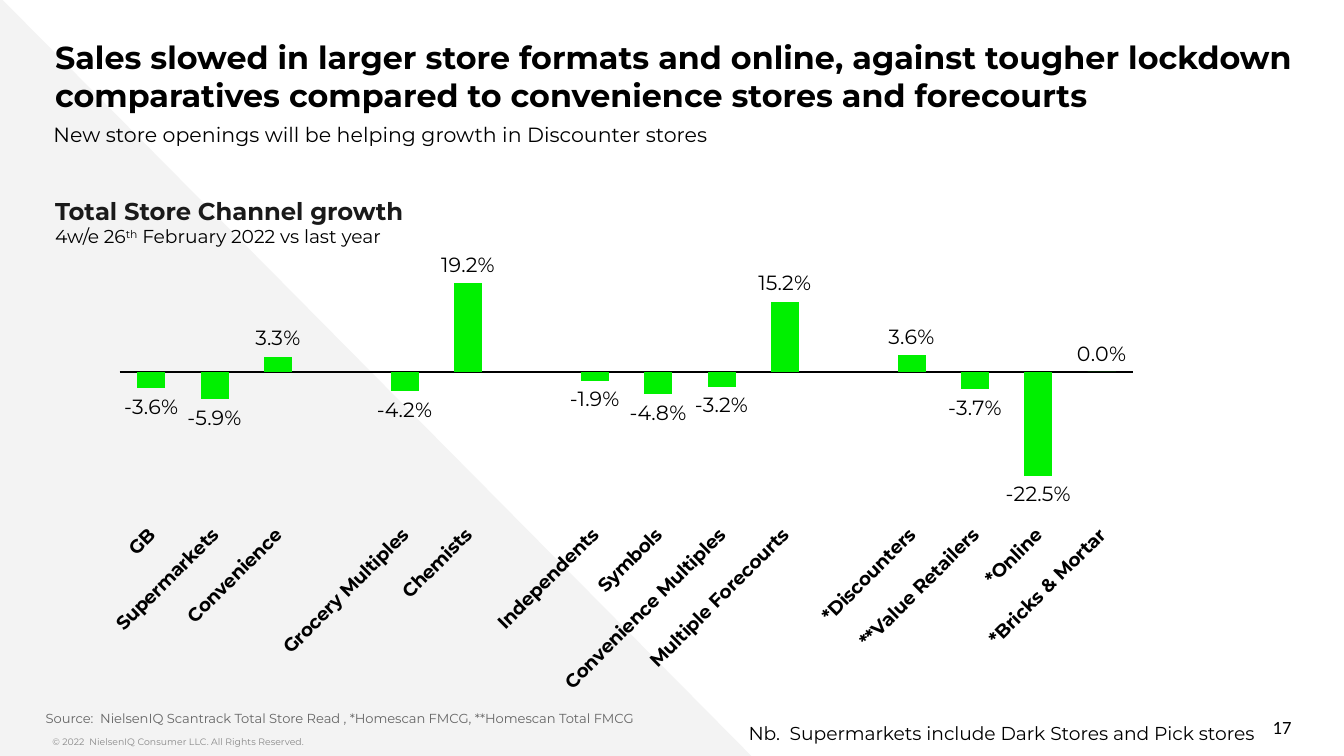
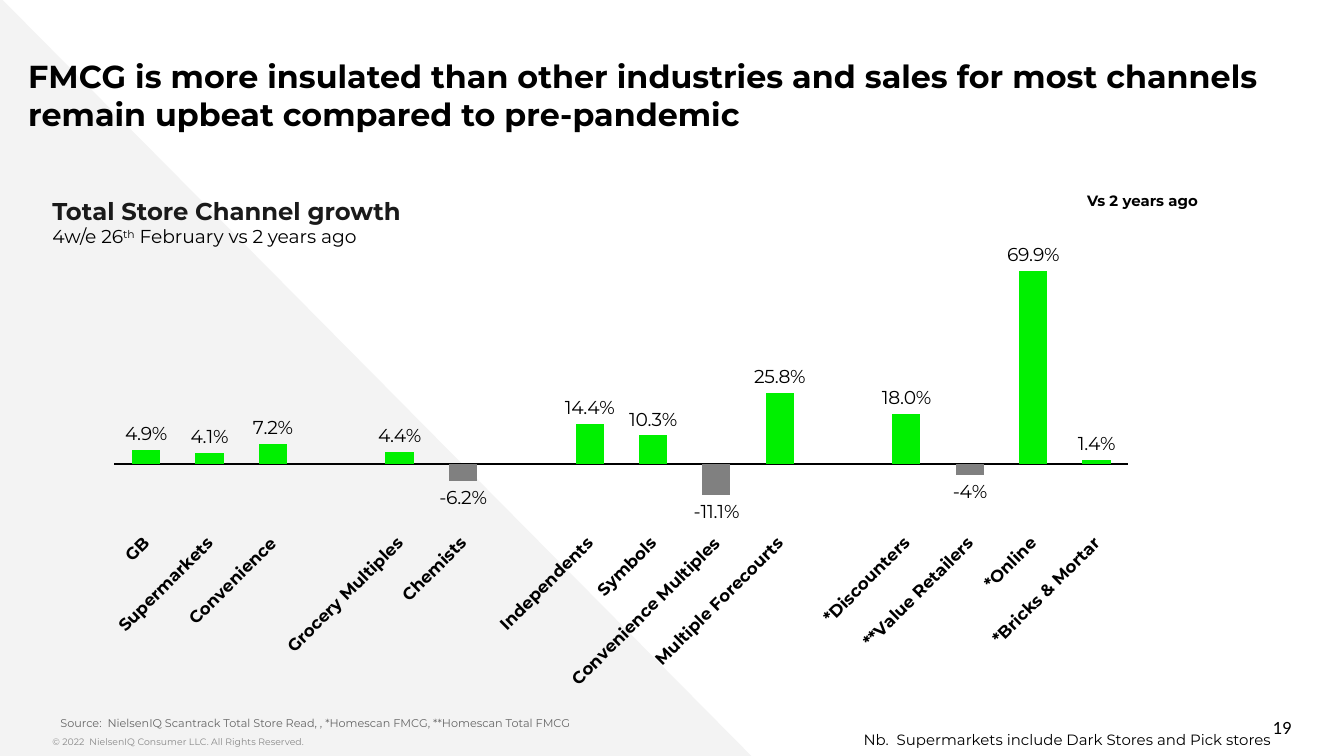
from lxml import etree
from pptx import Presentation
from pptx.chart.data import CategoryChartData
from pptx.dml.color import RGBColor
from pptx.enum.chart import XL_CHART_TYPE as ChartType
from pptx.enum.chart import XL_LABEL_POSITION as LabelPosition
from pptx.enum.chart import XL_TICK_LABEL_POSITION as TickLabels
from pptx.enum.chart import XL_TICK_MARK as TickMark
from pptx.enum.shapes import MSO_SHAPE as Preset
from pptx.enum.text import MSO_ANCHOR as Anchor
from pptx.enum.text import MSO_AUTO_SIZE as AutoSize
from pptx.enum.text import PP_ALIGN as Align
from pptx.oxml import parse_xml
from pptx.util import Inches, Pt

WIDTH = 10
HEIGHT = WIDTH * 9 / 16
FONT = "Montserrat"
COLORS = {
    "black": "000000", "heading": "1A1A1A", "source": "666666", "copyright": "888888",
    "band": "F3F3F3", "bar": "00F000", "decline": "808080",
}
CHART_NS = "http://schemas.openxmlformats.org/drawingml/2006/chart"

COPYRIGHT = "© 2022  NielsenIQ Consumer LLC. All Rights Reserved."
NOTE = "Nb.  Supermarkets include Dark Stores and Pick stores"
CHANNELS = [
    "GB", "Supermarkets", "Convenience", "",
    "Grocery Multiples", "Chemists", "",
    "Independents", "Symbols", "Convenience Multiples", "Multiple Forecourts", "",
    "*Discounters", "**Value Retailers", "*Online", "*Bricks & Mortar",
]

SLIDES = [
    {
        "number": "17",
        "title": "Sales slowed in larger store formats and online, against tougher lockdown "
                 "comparatives compared to convenience stores and forecourts",
        "title_box": (0.41, 0.18, 9.53, 0.41),
        "period": " February 2022 vs last year",
        "heading_left": 0.41,
        "source": "Source:  NielsenIQ Scantrack Total Store Read , *Homescan FMCG, "
                  "**Homescan Total FMCG",
        "source_at": (0.18, 5.19), "source_size": 7,
        "note_box": (5.37, 5.32, 4.06, 0.27), "note_size": 10,
        "extra": ("New store openings will be helping growth in Discounter stores",
                  (0.3, 0.86, 9.53, 0.29), {"size": 11}),
        "values": [-0.036, -0.059, 0.033, None, -0.042, 0.192, None, -0.019, -0.048,
                   -0.032, 0.152, None, 0.036, -0.037, -0.225, 0],
        "chart_top": 1.71, "plot_at": (0.009, 0.008), "scale": (-0.3, 0.3),
        "axis_size": 10, "label_size": 11,
        "decline": "bar", "own_labels": {},
    },
    {
        "number": "19",
        "title": "FMCG is more insulated than other industries and sales for most channels "
                 "remain upbeat compared to pre-pandemic",
        "title_box": (0.21, 0.32, 9.79, 0.65),
        "period": " February vs 2 years ago",
        "heading_left": 0.39,
        "source": "Source:  NielsenIQ Scantrack Total Store Read, , *Homescan FMCG, "
                  "**Homescan Total FMCG",
        "source_at": (0.29, 5.23), "source_size": 6,
        "note_box": (6.29, 5.39, 3.27, 0.24), "note_size": 8,
        "extra": ("Vs 2 years ago", (7.99, 1.38, 1.04, 0.24),
                  {"size": 8, "bold": True, "wrap": False}),
        "values": [0.049, 0.041, 0.072, None, 0.044, -0.062, None, 0.144, 0.103,
                   -0.111, 0.258, None, 0.18, -0.04, 0.699, 0.014],
        "chart_top": 1.64, "plot_at": (0.004, 0.047), "scale": (-0.2, 0.8),
        "axis_size": 9, "label_size": 10,
        "decline": "decline", "own_labels": {13: "-4%"},
    },
]


def rgb(name):
    return RGBColor.from_string(COLORS[name])


def inches(box):
    return [Inches(length) for length in box]


def style_font(font, size, color="black", bold=False, name=FONT):
    font.name, font.size, font.bold = name, Pt(size), bold
    font.color.rgb = rgb(color)


def write(shape, text, *, align=Align.LEFT, anchor=Anchor.TOP, inset=(0, 0.05),
          wrap=True, indent=0, space_after=0, **font):
    """Fill a shape with a string or a list of (text, font changes) runs."""
    frame = shape.text_frame
    frame.auto_size, frame.word_wrap = AutoSize.NONE, wrap
    frame.vertical_anchor = anchor
    frame.margin_left = frame.margin_right = Inches(inset[0])
    frame.margin_top = frame.margin_bottom = Inches(inset[1])
    paragraph = frame.paragraphs[0]
    paragraph.alignment, paragraph.space_after = align, Pt(space_after)
    if indent:
        properties = paragraph._p.get_or_add_pPr()
        properties.set("marL", str(Inches(indent)))
        properties.set("indent", "0")
    for part, changes in [(text, {})] if isinstance(text, str) else text:
        options = {**font, **changes}
        superscript = options.pop("superscript", False)
        if options.pop("new_line", False):
            paragraph.add_line_break()
        run = paragraph.add_run()
        run.text = part
        style_font(run.font, **options)
        if superscript:
            run._r.get_or_add_rPr().set("baseline", "30000")
    return shape


def add_text(slide, text, box, **options):
    return write(slide.shapes.add_textbox(*inches(box)), text, **options)


def decorate_layout(layout, slide):
    """Draw the grey band and copyright line once and move them to the layout."""
    band = slide.shapes.add_shape(
        Preset.RIGHT_TRIANGLE, *inches((0, -0.02, 5.59, HEIGHT + 0.02)))
    band.shadow.inherit = False
    band.fill.solid()
    band.fill.fore_color.rgb = rgb("band")
    band.line.fill.background()
    notice = add_text(slide, COPYRIGHT, (0.39, 5.43, 5.54, 0.2), size=5, color="copyright")
    for position, shape in enumerate((band, notice)):
        shape._element.nvSpPr.cNvPr.set("id", str(20 + position))
        layout.shapes._spTree.insert(2 + position, shape._element)


def place_plot(chart, x, y, width, height):
    layout = etree.Element(f"{{{CHART_NS}}}layout")
    manual = etree.SubElement(layout, f"{{{CHART_NS}}}manualLayout")
    settings = {"layoutTarget": "inner", "xMode": "edge", "yMode": "edge",
                "x": x, "y": y, "w": width, "h": height}
    for tag, value in settings.items():
        etree.SubElement(manual, f"{{{CHART_NS}}}{tag}").set("val", str(value))
    area = chart._chartSpace.chart.plotArea
    for old in area.findall(f"{{{CHART_NS}}}layout"):
        area.remove(old)
    area.insert(0, parse_xml(etree.tostring(layout)))


def add_growth_chart(slide, content):
    data = CategoryChartData(number_format="0.0%")
    data.categories = CHANNELS
    data.add_series("Series 1", content["values"])
    chart = slide.shapes.add_chart(
        ChartType.COLUMN_CLUSTERED,
        *inches((0.82, content["chart_top"], 7.85, 3.52)), data).chart
    chart.has_legend = chart.has_title = False
    style_font(chart.font, 10)
    place_plot(chart, *content["plot_at"], 0.961, 0.585)

    channels = chart.category_axis
    channels.tick_label_position = TickLabels.LOW
    channels.major_tick_mark = channels.minor_tick_mark = TickMark.NONE
    channels.has_major_gridlines = False
    channels.format.line.color.rgb = rgb("black")
    channels.format.line.width = Pt(0.75)
    style_font(channels.tick_labels.font, content["axis_size"], bold=True)
    channels._element.txPr.bodyPr.set("rot", str(-45 * 60000))

    growth = chart.value_axis
    growth.visible = growth.has_major_gridlines = False
    growth.minimum_scale, growth.maximum_scale = content["scale"]

    plot = chart.plots[0]
    plot.gap_width, plot.vary_by_categories = 125, False
    series = plot.series[0]
    series.invert_if_negative = False
    series.format.fill.solid()
    series.format.fill.fore_color.rgb = rgb("bar")
    labels = series.data_labels
    labels.show_value, labels.position = True, LabelPosition.OUTSIDE_END
    labels.number_format, labels.number_format_is_linked = "0.0%", False
    style_font(labels.font, content["label_size"])

    for index, value in enumerate(content["values"]):
        if value is not None and value < 0 and content["decline"] != "bar":
            fill = series.points[index].format.fill
            fill.solid()
            fill.fore_color.rgb = rgb(content["decline"])
    for index, text in content["own_labels"].items():
        label = series.points[index].data_label
        label.text_frame.text = text
        style_font(label.text_frame.paragraphs[0].runs[0].font, content["label_size"])
        label.position = LabelPosition.OUTSIDE_END


def fill_slide(slide, content):
    title = slide.shapes.title
    title.left, title.top, title.width, title.height = inches(content["title_box"])
    write(title, content["title"], inset=(0, 0.1), size=17, bold=True)

    add_text(slide, content["number"], (7.36, 5.26, 2.25, 0.3), align=Align.RIGHT,
             anchor=Anchor.MIDDLE, size=10, name="Calibri")
    heading = [
        ("Total Store Channel growth", {"size": 13, "color": "heading", "bold": True}),
        ("4w/e 26", {"new_line": True}),
        ("th", {"superscript": True}),
        (content["period"], {}),
    ]
    add_text(slide, heading, (content["heading_left"], 1.41, 4.16, 0.49),
             space_after=12, size=10)
    add_text(slide, content["source"], (*content["source_at"], 8.92, 0.2),
             inset=(0, 0.1), indent=0.16, size=content["source_size"], color="source")
    add_growth_chart(slide, content)
    add_text(slide, NOTE, content["note_box"], inset=(0.1, 0.05), wrap=False,
             align=Align.RIGHT, size=content["note_size"])
    text, box, options = content["extra"]
    add_text(slide, text, box, inset=(0.1, 0.05), **options)


def main():
    presentation = Presentation()
    presentation.slide_width, presentation.slide_height = Inches(WIDTH), Inches(HEIGHT)
    layout = presentation.slide_layouts.get_by_name("Title Only")
    slides = [presentation.slides.add_slide(layout) for _ in SLIDES]
    decorate_layout(layout, slides[0])
    for slide, content in zip(slides, SLIDES):
        fill_slide(slide, content)
    presentation.save("out.pptx")


if __name__ == "__main__":
    main()
